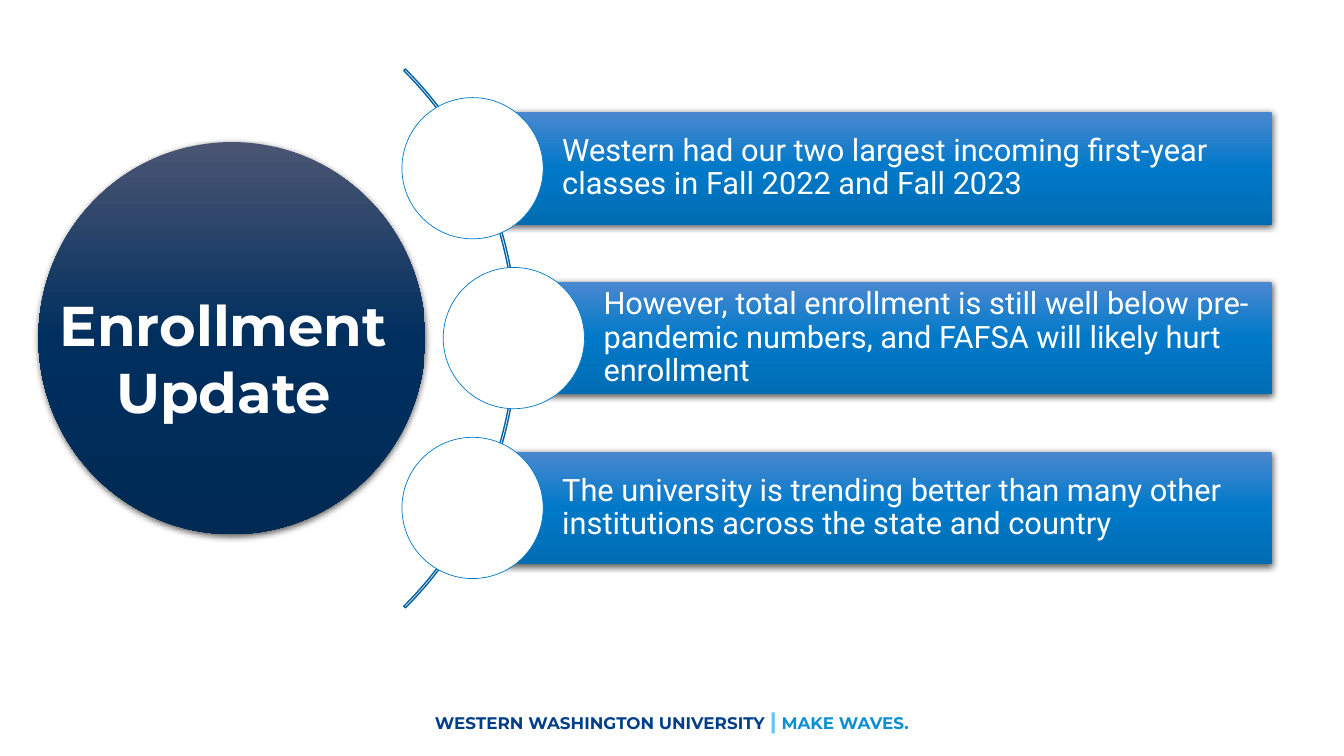
from lxml import etree
from pptx import Presentation
from pptx import util as u
from pptx.dml.color import RGBColor
from pptx.enum import shapes, text
from pptx.oxml import ns

# Content
TITLE = ["Enrollment ", "Update "]
POINTS = [  # wording, left edge of the bar in cm
    ("Western had our two largest incoming first-year classes in Fall 2022 and Fall 2023", 11.91),
    ("However, total enrollment is still well below pre-pandemic numbers, and FAFSA will likely "
     "hurt enrollment", 12.95),
    ("The university is trending better than many other institutions across the state and country",
     11.91),
]
FOOTER = [  # wording, size, colour
    ("WESTERN WASHINGTON UNIVERSITY ", 12, "navy"),
    ("|", 16, "sky"),
    (" ", 12, "navy"),
    ("MAKE WAVES.", 12, "azure"),
]
COLORS = {"white": "FFFFFF", "navy": "003F87", "sky": "63C2FF", "azure": "0C8FD3",
          "arc": "0061A0", "ring": "0079C8", "shadow": "000000"}
DISC_GRADIENT = ["4B5573", "002F5E", "002A54"]
BAR_GRADIENT = ["4B88D0", "0079C8", "006CB2"]

# Layout in cm
BAR_TOP, BAR_HEIGHT, BAR_PITCH, BAR_RIGHT = 2.82, 2.84, 4.28, 32.05
RING = 3.56

deck = Presentation()
deck.slide_width, deck.slide_height = u.Cm(33.87), u.Cm(19.05)
page = deck.slides.add_slide(deck.slide_layouts[6])


def color(name):
    return RGBColor.from_string(COLORS[name])


def add_shape(kind, *place):
    shape = page.shapes.add_shape(kind, *map(u.Cm, place))
    shape.shadow.inherit = False
    return shape


def outline(shape, name, width):
    shape.line.color.rgb = color(name)
    shape.line.width = u.Pt(width)


def add_raised(kind, place, gradient):
    """Shape with a downward gradient and a soft shadow."""
    shape = add_shape(kind, *place)
    shape.line.fill.background()
    shape.fill.gradient()
    shape.fill.gradient_angle = 270
    properties = shape._element.spPr
    stops = properties.find(".//" + ns.qn("a:gsLst"))
    for stop in list(stops):
        stops.remove(stop)
    for index, value in enumerate(gradient):
        stop = etree.SubElement(stops, ns.qn("a:gs"), pos=str(index * 50000))
        etree.SubElement(stop, ns.qn("a:srgbClr"), val=value)
    shadow = etree.SubElement(properties.find(ns.qn("a:effectLst")), ns.qn("a:outerShdw"),
                              blurRad=str(u.Pt(4.5)), dist=str(u.Pt(1.5)),
                              dir="5400000", rotWithShape="0")
    shade = etree.SubElement(shadow, ns.qn("a:srgbClr"), val=COLORS["shadow"])
    etree.SubElement(shade, ns.qn("a:alpha"), val="63000")
    return shape


def add_text_box(*place):
    box = page.shapes.add_textbox(*map(u.Cm, place))
    box.text_frame.word_wrap = True
    return box.text_frame


# Title disc and arc
add_raised(shapes.MSO_SHAPE.OVAL, (0.97, 3.58, 9.75, 9.88), DISC_GRADIENT)
arc = add_shape(shapes.MSO_SHAPE.BLOCK_ARC, -6.17, -1.07, 19.2, 19.2)
for index, value in enumerate((189, 27, 0.003)):
    arc.adjustments[index] = value
arc.fill.background()
outline(arc, "arc", 1)

# Bars, each with a ring centred on its left edge
for row, (wording, left) in enumerate(POINTS):
    top = BAR_TOP + row * BAR_PITCH
    bar = add_raised(shapes.MSO_SHAPE.RECTANGLE, (left, top, BAR_RIGHT - left, BAR_HEIGHT),
                     BAR_GRADIENT)
    frame = bar.text_frame
    frame.word_wrap = True
    frame.vertical_anchor = text.MSO_ANCHOR.MIDDLE
    frame.margin_left = u.Cm(2.26)
    frame.margin_right = frame.margin_top = frame.margin_bottom = u.Cm(0.16)
    para = frame.paragraphs[0]
    para.text = wording
    para.alignment = text.PP_ALIGN.LEFT
    para.line_spacing = 0.9
    para.font.name, para.font.size = "Roboto", u.Pt(22)
    para.font.color.rgb = color("white")

    ring = add_shape(shapes.MSO_SHAPE.OVAL, left - RING / 2, top + (BAR_HEIGHT - RING) / 2,
                     RING, RING)
    ring.fill.solid()
    ring.fill.fore_color.rgb = color("white")
    outline(ring, "ring", 0.5)

# Title
frame = add_text_box(0.46, 7.19, 10.74, 3.68)
for index, wording in enumerate(TITLE):
    para = frame.add_paragraph() if index else frame.paragraphs[0]
    para.text = wording
    para.alignment = text.PP_ALIGN.CENTER
    para.font.name, para.font.size, para.font.bold = "Montserrat", u.Pt(40), True
    para.font.color.rgb = color("white")

# Footer
frame = add_text_box(0, 17.65, 33.87, 1.02)
frame.vertical_anchor = text.MSO_ANCHOR.MIDDLE
para = frame.paragraphs[0]
para.alignment = text.PP_ALIGN.CENTER
para.font.name, para.font.bold = "Montserrat", True
for wording, size, name in FOOTER:
    span = para.add_run()
    span.text = wording
    span.font.name, span.font.bold = "Montserrat", True
    span.font.size = u.Pt(size)
    span.font.color.rgb = color(name)

deck.save("out.pptx")
